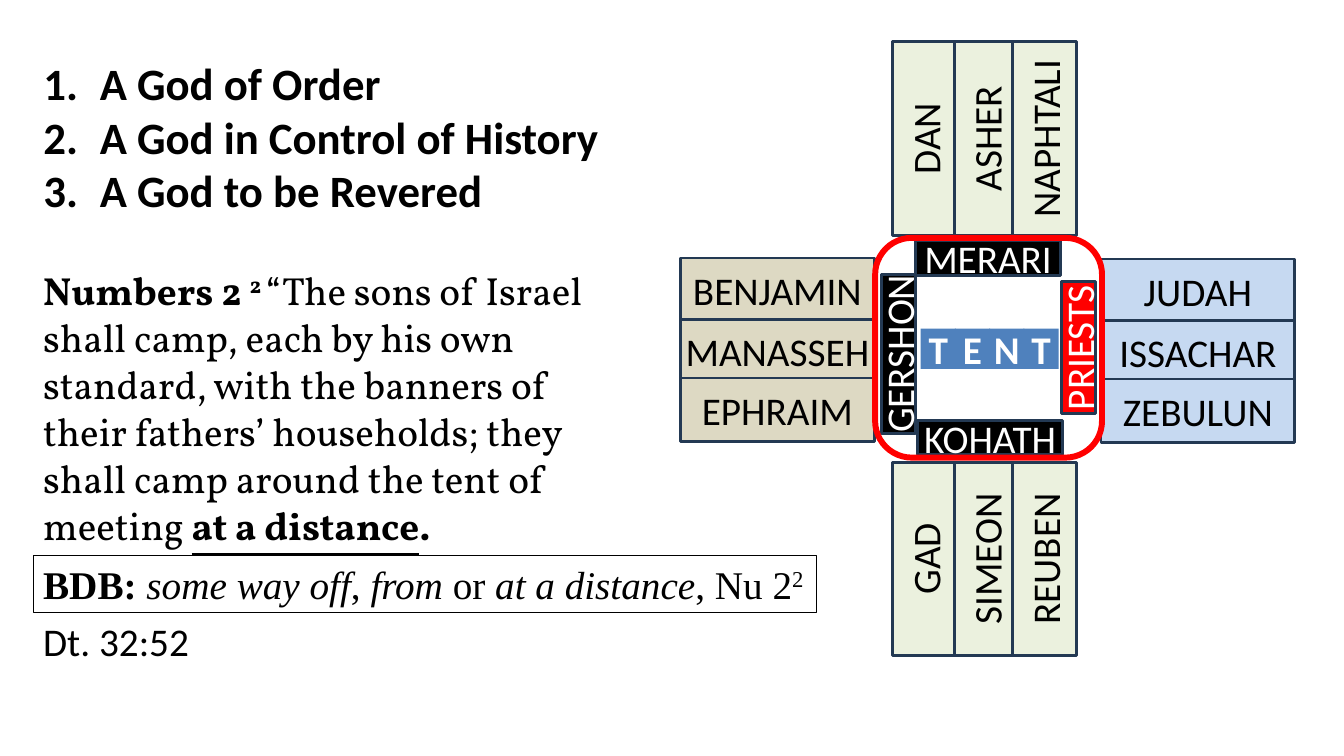
"""Build the slide of the tribes camped around the tent."""
from lxml import etree
from pptx import Presentation
from pptx.dml.color import RGBColor
from pptx.enum.shapes import MSO_SHAPE
from pptx.enum.text import MSO_ANCHOR, MSO_AUTO_SIZE, PP_ALIGN
from pptx.oxml.ns import qn
from pptx.util import Pt

RECT, ROUND = MSO_SHAPE.RECTANGLE, MSO_SHAPE.ROUNDED_RECTANGLE
MIDDLE, TOP = MSO_ANCHOR.MIDDLE, MSO_ANCHOR.TOP
CENTER, LEFT = PP_ALIGN.CENTER, PP_ALIGN.LEFT
GROW = MSO_AUTO_SIZE.SHAPE_TO_FIT_TEXT

SCALE = 9144
COLORS = {
    "black": "000000", "white": "FFFFFF", "red": "FF0000", "navy": "233953",
    "sand": "DDD9C3", "sky": "C6D9F1", "mint": "EBF1DE", "blue": "4F81BD",
}
STEPS = (0, 61, 119)
CAMPS = [
    (675, 256, False, "sand", ("BENJAMIN", "MANASSEH", "EPHRAIM")),
    (1092, 257, False, "sky", ("JUDAH", "ISSACHAR", "ZEBULUN")),
    (821, 106, True, "mint", ("DAN", "ASHER", "NAPHTALI")),
    (821, 523, True, "mint", ("GAD", "SIMEON", "REUBEN")),
]
LEVITES = [
    ("GERSHON", (812, 334, 158, 34), "black", True),
    ("MERARI", (908, 239, 144, 34), "black", False),
    ("KOHATH", (910, 417, 144, 34), "black", False),
    ("PRIESTS", (1004, 328, 131, 34), "red", True),
]
POINTS = ("A God of Order", "A God in Control of History", "A God to be Revered")
VERSE = [
    ("Numbers 2 ", "b"),
    ("2 ", "b^"),
    ("“The sons of Israel shall camp, each by his own standard, with the banners of "
     "their fathers’ households; they shall camp around the tent of meeting ", ""),
    ("at a distance", "bu"),
    (".", "b"),
]
LEXICON = [
    ("BDB:", "b"), (" some way off", "i"), (", ", ""), ("from", "i"), (" or ", ""),
    ("at a distance", "i"), (", Nu 2", ""), ("2", "^"),
]


def px(*values):
    """Turn px lengths into EMU."""
    return [value * SCALE for value in values]


def rgb(name):
    """Look up a colour by name."""
    return RGBColor.from_string(COLORS[name])


def add_run(para, text, marks="", font="Calibri", size=28, color="black"):
    """Add one run; marks are b, i, u and ^ for superscript."""
    run = para.add_run()
    run.text = text
    face = run.font
    face.name, face.size = font, Pt(size)
    face.color.rgb = rgb(color)
    face.bold, face.italic = "b" in marks, "i" in marks
    if "u" in marks:
        face.underline = True
    if "^" in marks:
        run._r.get_or_add_rPr().set("baseline", "30000")


def add_box(shapes, box, fill=None, line=None, width=2, kind=RECT):
    """Add a preset shape with its fill and outline."""
    shape = shapes.add_shape(kind, *px(*box))
    shape.shadow.inherit = False
    if fill:
        shape.fill.solid()
        shape.fill.fore_color.rgb = rgb(fill)
    else:
        shape.fill.background()
    if line:
        shape.line.color.rgb = rgb(line)
        shape.line.width = Pt(width)
    else:
        shape.line.fill.background()
    return shape


def add_label(shapes, text, box, fill, color, turn=False, line="navy", marks=""):
    """Add a box with one centred word, upright or turned."""
    shape = add_box(shapes, box, fill, line)
    if turn:
        shape.rotation = 270
    frame = shape.text_frame
    frame.word_wrap = True
    frame.vertical_anchor = MIDDLE
    frame.margin_left = frame.margin_right = 0
    para = frame.paragraphs[0]
    para.alignment = CENTER
    add_run(para, text, marks, color=color)


def add_camp(shapes, left, top, turn, fill, tribes):
    """Add a group of three tribes, stacked or side by side."""
    group = shapes.add_group_shape()
    for step, tribe in zip(STEPS, tribes):
        x, y = (left + step, top) if turn else (left, top + step)
        add_label(group.shapes, tribe, (x, y, 192, 63), fill, "black", turn)


def add_tent(shapes):
    """Add the four letters of the tent."""
    for place, letter in enumerate("TENT"):
        box = (913 + 34 * place, 326, 35, 40)
        add_label(shapes, letter, box, "blue", "white", line=None, marks="b")


def fill_text(shape, runs, font="Calibri"):
    """Fill a shape with one left paragraph of runs."""
    frame = shape.text_frame
    frame.word_wrap = True
    frame.auto_size = GROW
    frame.vertical_anchor = TOP
    para = frame.paragraphs[0]
    para.alignment = LEFT
    for text, marks in runs:
        add_run(para, text, marks, font)


def fill_list(body, items, box):
    """Place the body placeholder and fill it with a numbered list."""
    body.left, body.top, body.width, body.height = px(*box)
    frame = body.text_frame
    frame.word_wrap = True
    frame.auto_size = GROW
    indent = px(56)[0]
    for place, item in enumerate(items):
        para = frame.add_paragraph() if place else frame.paragraphs[0]
        para.space_before = Pt(0)
        props = para._p.get_or_add_pPr()
        props.set("marL", str(indent))
        props.set("indent", str(-indent))
        etree.SubElement(props, qn("a:buFont"), typeface="+mj-lt")
        etree.SubElement(props, qn("a:buAutoNum"), type="arabicPeriod")
        add_run(para, item, "b", size=32)


def main():
    """Build and save the slide."""
    deck = Presentation()
    deck.slide_width, deck.slide_height = px(1333, 750)
    slide = deck.slides.add_slide(deck.slide_layouts[1])
    shapes = slide.shapes
    title = shapes.title._element
    title.getparent().remove(title)
    fill_list(slide.placeholders[1], POINTS, (33, 50, 602, 172))
    for camp in CAMPS:
        add_camp(shapes, *camp)
    for name, box, fill, turn in LEVITES:
        add_label(shapes, name, box, fill, "white", turn)
    add_tent(shapes)
    add_box(shapes, (868, 236, 225, 218), line="red", width=4.25, kind=ROUND)
    fill_text(shapes.add_textbox(*px(33, 259, 569, 293)), VERSE, "Vollkorn")
    lexicon = add_box(shapes, (33, 551, 777, 57), line="black", width=0.75)
    fill_text(lexicon, LEXICON, "Times New Roman")
    fill_text(shapes.add_textbox(*px(33, 608, 375, 57)), [("Dt. 32:52", "")])
    deck.save("out.pptx")


if __name__ == "__main__":
    main()
